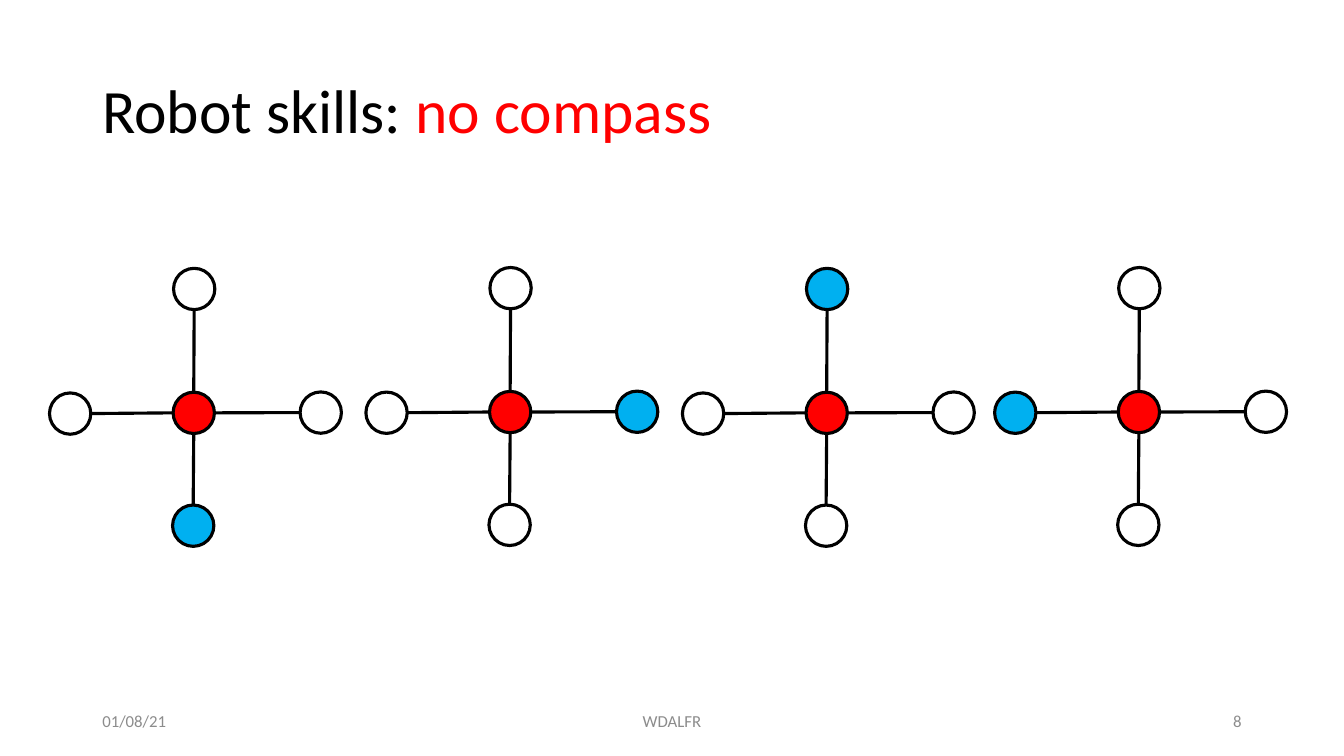
from lxml import etree
from pptx import Presentation
from pptx.dml.color import RGBColor
from pptx.enum.shapes import MSO_CONNECTOR, MSO_SHAPE
from pptx.enum.text import MSO_ANCHOR, PP_ALIGN
from pptx.oxml.ns import qn
from pptx.util import Pt

OVAL = MSO_SHAPE.OVAL
STRAIGHT = MSO_CONNECTOR.STRAIGHT
MIDDLE = MSO_ANCHOR.MIDDLE
LEFT, CENTER, RIGHT = PP_ALIGN.LEFT, PP_ALIGN.CENTER, PP_ALIGN.RIGHT

FONT = "Calibri"
BLACK, WHITE, RED, BLUE, GRAY = "000000", "FFFFFF", "FF0000", "00B0F0", "8C8C8C"
DIAMETER = 29.5
LINE_WIDTH = 2.25

# Each arm: unit direction from the robot, then the offset of its node.
ARMS = {
    "up": ((0, -1), (0.3, -88.5)),
    "left": ((-1, 0), (-88.3, 0.5)),
    "right": ((1, 0), (90.7, -0.2)),
    "down": ((0, 1), (-0.4, 80.6)),
}
# Each view: centre of the robot, then the arm whose node is blue.
VIEWS = [
    ((138.4, 294.9), "down"),
    ((364.4, 294.3), "right"),
    ((590.5, 294.9), "up"),
    ((813.5, 294.3), "left"),
]


def rgb(value):
    """Return the colour for a hex string."""
    return RGBColor.from_string(value)


def add_text(slide, box, runs, size=12, align=LEFT, spacing=1.0):
    """Add a one-paragraph text box from (text, colour) runs."""
    tf = slide.shapes.add_textbox(*map(Pt, box)).text_frame
    tf.word_wrap = True
    tf.vertical_anchor = MIDDLE
    p = tf.paragraphs[0]
    p.alignment = align
    p.line_spacing = spacing
    for text, color in runs:
        r = p.add_run()
        r.text = text
        r.font.name = FONT
        r.font.size = Pt(size)
        r.font.color.rgb = rgb(color)


def set_line(sp):
    """Give a shape or connector the black graph line."""
    sp.line.color.rgb = rgb(BLACK)
    sp.line.width = Pt(LINE_WIDTH)


def add_node(group, x, y, color):
    """Add a circle centred on a point."""
    r = DIAMETER / 2
    sp = group.shapes.add_shape(OVAL, Pt(x - r), Pt(y - r), Pt(DIAMETER), Pt(DIAMETER))
    sp.shadow.inherit = False
    sp.fill.solid()
    sp.fill.fore_color.rgb = rgb(color)
    set_line(sp)


def add_edge(group, start, end, direction):
    """Join the rims of two circles that lie along a direction."""
    dx, dy = (DIAMETER / 2 * d for d in direction)
    points = (start[0] + dx, start[1] + dy, end[0] - dx, end[1] - dy)
    line = group.shapes.add_connector(STRAIGHT, *map(Pt, points))
    etree.SubElement(line._element.spPr, qn("a:effectLst"))
    set_line(line)


def add_view(slide, robot, blue_arm):
    """Add a red robot with four neighbours, one of them blue."""
    group = slide.shapes.add_group_shape()
    x, y = robot
    add_node(group, x, y, RED)
    for arm, (direction, (dx, dy)) in ARMS.items():
        node = (x + dx, y + dy)
        add_node(group, *node, BLUE if arm == blue_arm else WHITE)
        add_edge(group, robot, node, direction)


def main():
    """Build the slide and save it."""
    prs = Presentation()
    prs.slide_width, prs.slide_height = Pt(960), Pt(540)
    slide = prs.slides.add_slide(prs.slide_layouts[6])
    add_text(slide, (66, 28.75, 828, 104.4),
             [("Robot skills: ", BLACK), ("no compass", RED)], size=44, spacing=0.9)
    add_text(slide, (66, 500.5, 216, 28.75), [("01/08/21", GRAY)])
    add_text(slide, (318, 500.5, 324, 28.75), [("WDALFR", GRAY)], align=CENTER)
    add_text(slide, (678, 500.5, 216, 28.75), [("8", GRAY)], align=RIGHT)
    for robot, blue_arm in VIEWS:
        add_view(slide, robot, blue_arm)
    prs.save("out.pptx")


if __name__ == "__main__":
    main()
